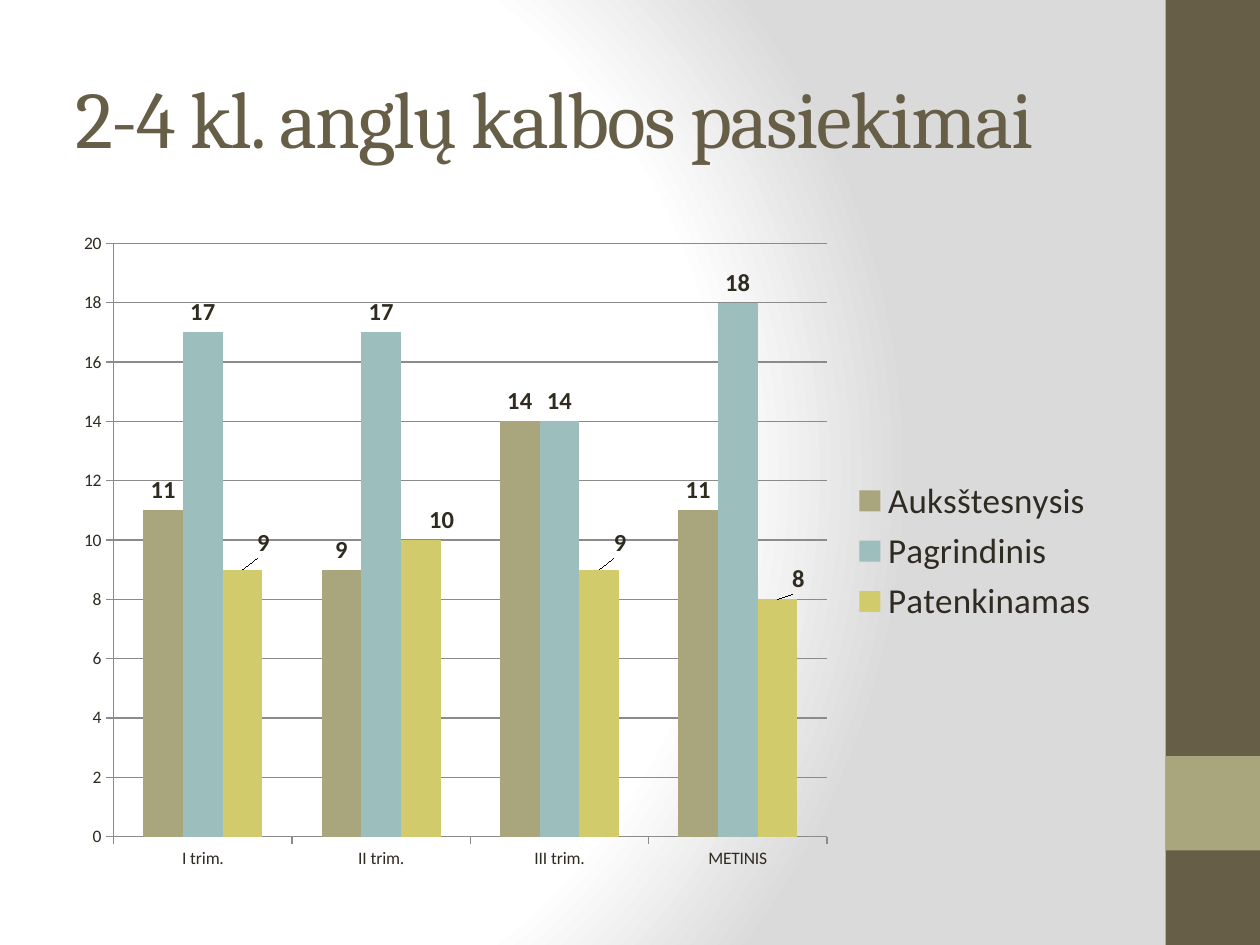
from lxml.etree import SubElement
from pptx import Presentation
from pptx.chart.data import CategoryChartData
from pptx.dml.color import RGBColor
from pptx.enum.chart import XL_CHART_TYPE, XL_LABEL_POSITION, XL_LEGEND_POSITION, XL_TICK_MARK
from pptx.enum.shapes import MSO_SHAPE
from pptx.enum.text import MSO_ANCHOR, PP_ALIGN
from pptx.oxml import parse_xml
from pptx.oxml.ns import nsdecls, qn
from pptx.util import Inches, Pt

BROWN = RGBColor(0x67, 0x5E, 0x47)
KHAKI = RGBColor(0xA9, 0xA5, 0x7C)
TEAL = RGBColor(0x9C, 0xBE, 0xBD)
YELLOW = RGBColor(0xD2, 0xCB, 0x6C)
INK = RGBColor(0x2F, 0x2B, 0x20)
GRAY = RGBColor(0x8B, 0x8B, 0x8B)
WHITE = RGBColor(0xFF, 0xFF, 0xFF)
SILVER = RGBColor(0xDA, 0xDA, 0xDA)

TERMS = ["I trim.", "II trim.", "III trim.", "METINIS"]
LEVELS = [
    ("Auksštesnysis", [11, 9, 14, 11], KHAKI),
    ("Pagrindinis", [17, 17, 14, 18], TEAL),
    ("Patenkinamas", [9, 10, 9, 8], YELLOW),
]
LABEL_SHIFTS = [(0.02, -0.01), (0.02, 0), (0.02, -0.01), (0.02, 0)]


class SlideBuilder:
    """Draws styled elements on the current slide."""

    def __init__(self, slide):
        self.slide = slide
        self.heading_font = "Cambria"
        self.body_font = "Calibri"

    def background(self, stops):
        stop_xml = "".join(
            f'<a:gs pos="{position * 1000}"><a:srgbClr val="{color}"/></a:gs>'
            for position, color in stops
        )
        background = parse_xml(
            f'<p:bg {nsdecls("p", "a")}><p:bgPr><a:gradFill rotWithShape="1">'
            f"<a:gsLst>{stop_xml}</a:gsLst>"
            '<a:path path="circle"><a:fillToRect l="20000" t="50000" r="100000" b="50000"/></a:path>'
            "</a:gradFill><a:effectLst/></p:bgPr></p:bg>"
        )
        self.slide.element.cSld.insert(0, background)

    def rectangle(self, left, top, width, height, color):
        shape = self.slide.shapes.add_shape(
            MSO_SHAPE.RECTANGLE, Inches(left), Inches(top), Inches(width), Inches(height)
        )
        shape.shadow.inherit = False
        shape.fill.solid()
        shape.fill.fore_color.rgb = color
        shape.line.fill.background()

    def title(self, text, left, top, width, height):
        title = self.slide.shapes.title
        title.left, title.top = Inches(left), Inches(top)
        title.width, title.height = Inches(width), Inches(height)
        title.text_frame.text = text
        title.text_frame.vertical_anchor = MSO_ANCHOR.MIDDLE
        paragraph = title.text_frame.paragraphs[0]
        paragraph.alignment = PP_ALIGN.LEFT
        run = paragraph.runs[0]
        self.style_font(run.font, 46, BROWN, self.heading_font)
        run.font._element.set("spc", "-100")

    def style_font(self, font, size, color=INK, name=None, bold=False):
        font.size = Pt(size)
        font.color.rgb = color
        font.name = name or self.body_font
        font.bold = bold

    def column_chart(self, categories, levels, left, top, width, height):
        data = CategoryChartData()
        data.categories = categories
        for name, values, _ in levels:
            data.add_series(name, values)
        chart = self.slide.shapes.add_chart(
            XL_CHART_TYPE.COLUMN_CLUSTERED,
            Inches(left), Inches(top), Inches(width), Inches(height), data,
        ).chart
        chart.has_title = False
        self.style_font(chart.font, 10)
        chart.has_legend = True
        chart.legend.position = XL_LEGEND_POSITION.RIGHT
        chart.legend.include_in_layout = False
        self.style_font(chart.legend.font, 20)
        for axis in (chart.category_axis, chart.value_axis):
            axis.major_tick_mark = XL_TICK_MARK.OUTSIDE
            self.style_line(axis.format.line)
        chart.value_axis.has_major_gridlines = True
        self.style_line(chart.value_axis.major_gridlines.format.line)
        plot = chart.plots[0]
        plot.gap_width = 150
        plot.overlap = 0
        plot.vary_by_categories = False
        for series, (_, _, color) in zip(plot.series, levels):
            series.format.fill.solid()
            series.format.fill.fore_color.rgb = color
            series.data_labels.show_value = True
            series.data_labels.position = XL_LABEL_POSITION.OUTSIDE_END
            self.style_font(series.data_labels.font, 14, bold=True)
        return chart

    def style_line(self, line):
        line.color.rgb = GRAY
        line.width = Pt(0.75)

    def shift_labels(self, series, shifts):
        for index, shift in enumerate(shifts):
            label = series.points[index].data_label
            label.position = XL_LABEL_POSITION.OUTSIDE_END
            self.style_font(label.font, 14, bold=True)
        for element, shift in zip(series._element.iter(qn("c:dLbl")), shifts):
            layout = parse_xml(f'<c:layout {nsdecls("c")}/>')
            manual = SubElement(layout, qn("c:manualLayout"))
            for axis, offset in zip("xy", shift):
                SubElement(manual, qn(f"c:{axis}")).set("val", str(offset))
            element.insert(1, layout)


def main():
    presentation = Presentation()
    presentation.slide_width, presentation.slide_height = Inches(10), Inches(7.5)
    builder = SlideBuilder(presentation.slides.add_slide(presentation.slide_layouts[5]))
    builder.background([(0, WHITE), (75, WHITE), (100, SILVER)])
    builder.rectangle(9.25, 0, 0.75, 7.5, BROWN)
    builder.rectangle(9.25, 6, 0.75, 0.75, KHAKI)
    builder.title("2-4 kl. anglų kalbos pasiekimai", 0.5, 0.3, 8.33, 1.25)
    chart = builder.column_chart(TERMS, LEVELS, 0.5, 1.75, 8.33, 5.25)
    builder.shift_labels(chart.plots[0].series[2], LABEL_SHIFTS)
    presentation.save("out.pptx")


if __name__ == "__main__":
    main()
